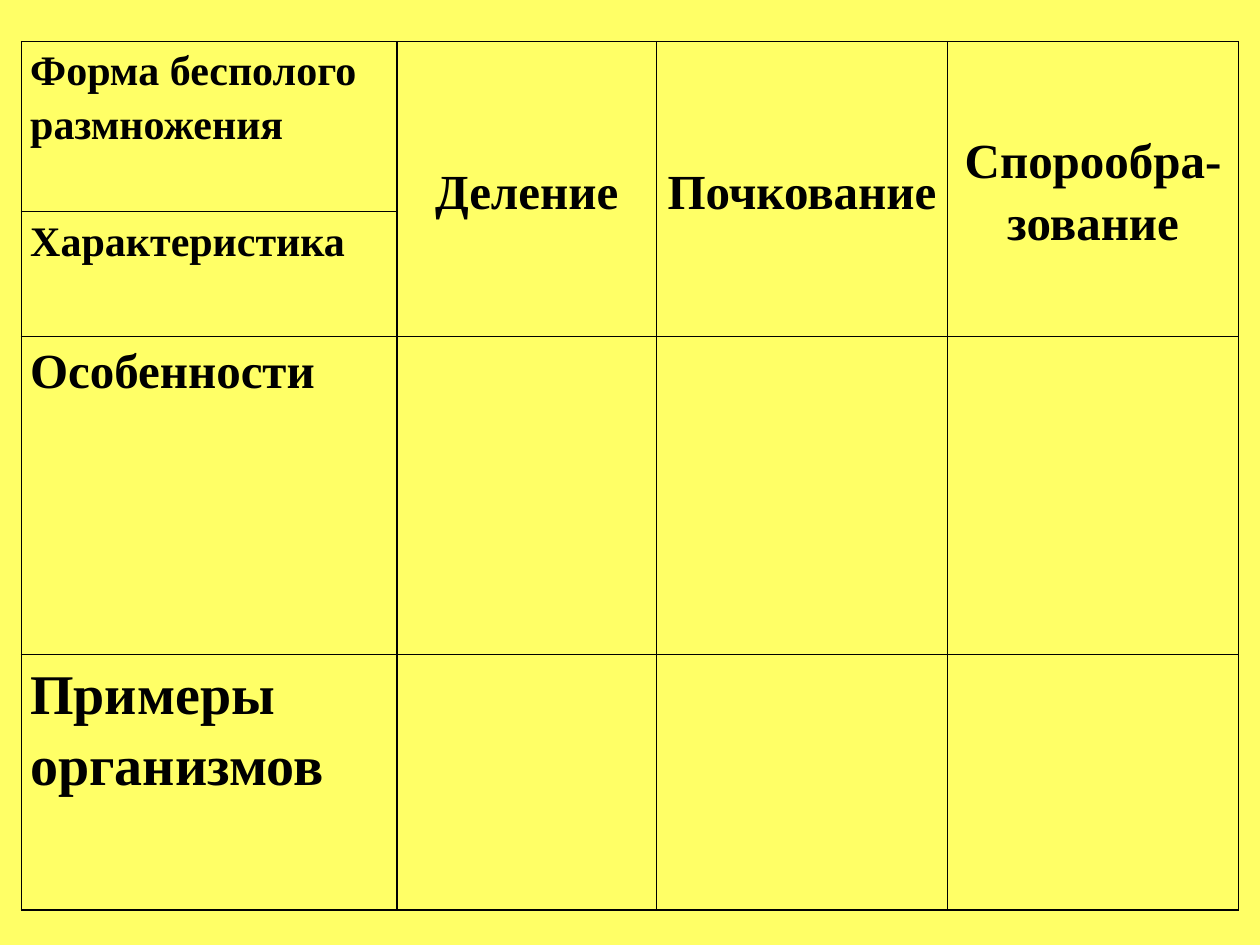
from dataclasses import dataclass

from lxml import etree
from pptx import Presentation
from pptx.dml.color import RGBColor
from pptx.enum.text import MSO_ANCHOR, PP_ALIGN
from pptx.oxml.ns import qn
from pptx.util import Inches, Pt

LEFT, CENTER, JUSTIFY = PP_ALIGN.LEFT, PP_ALIGN.CENTER, PP_ALIGN.JUSTIFY
TOP, MIDDLE = MSO_ANCHOR.TOP, MSO_ANCHOR.MIDDLE
BLANK_LAYOUT = 6


@dataclass(frozen=True)
class Theme:
    background: str = "FFFF66"
    ink: str = "000000"
    font: str = "Times New Roman"
    small: int = 24
    medium: int = 28
    large: int = 32
    line_spacing: float = 1.15
    border: float = 1
    cell_inset: float = 0.07


class SlideBuilder:
    def __init__(self, presentation, theme):
        self.theme = theme
        self.width = presentation.slide_width
        self.height = presentation.slide_height
        self.slide = presentation.slides.add_slide(presentation.slide_layouts[BLANK_LAYOUT])
        fill = self.slide.background.fill
        fill.solid()
        fill.fore_color.rgb = RGBColor.from_string(theme.background)

    def table(self, left, top, columns, rows):
        """Add a ruled, unfilled table; all lengths are shares of the slide's size."""
        frame = self.slide.shapes.add_table(
            len(rows), len(columns),
            round(left * self.width), round(top * self.height),
            round(sum(columns) * self.width), round(sum(rows) * self.height))
        table = frame.table
        table.first_row = table.horz_banding = False
        for column, share in zip(table.columns, columns):
            column.width = round(share * self.width)
        for row, share in zip(table.rows, rows):
            row.height = round(share * self.height)
        for cell in table.iter_cells():
            self.rule(cell)
            cell.fill.background()
        return table

    def rule(self, cell):
        """Draw all four borders of a cell."""
        properties = cell._tc.get_or_add_tcPr()
        for side in ("a:lnL", "a:lnR", "a:lnT", "a:lnB"):
            line = etree.SubElement(properties, qn(side), w=str(Pt(self.theme.border)))
            fill = etree.SubElement(line, qn("a:solidFill"))
            etree.SubElement(fill, qn("a:srgbClr"), val=self.theme.ink)

    def label(self, cell, text, size, alignment, anchor=TOP):
        cell.vertical_anchor = anchor
        cell.margin_left = cell.margin_right = Inches(self.theme.cell_inset)
        cell.margin_top = cell.margin_bottom = 0
        paragraph = cell.text_frame.paragraphs[0]
        paragraph.alignment = alignment
        paragraph.line_spacing = self.theme.line_spacing
        run = paragraph.add_run()
        run.text = text
        run.font.name = self.theme.font
        run.font.size = Pt(size)
        run.font.bold = True
        run.font.color.rgb = RGBColor.from_string(self.theme.ink)


def main():
    presentation = Presentation()
    presentation.slide_width = Inches(10)
    presentation.slide_height = Inches(7.5)
    theme = Theme()
    builder = SlideBuilder(presentation, theme)

    table = builder.table(
        left=0.017, top=0.044,
        columns=[0.298, 0.206, 0.231, 0.231],
        rows=[0.18, 0.09, 0.337, 0.27])

    row_headings = [
        ("Форма бесполого размножения", theme.small, LEFT),
        ("Характеристика", theme.small, JUSTIFY),
        ("Особенности", theme.medium, JUSTIFY),
        ("Примеры организмов", theme.large, JUSTIFY),
    ]
    for row, (text, size, alignment) in enumerate(row_headings):
        builder.label(table.cell(row, 0), text, size, alignment)

    reproduction_forms = ["Деление", "Почкование", "Спорообра-зование"]
    for column, text in enumerate(reproduction_forms, start=1):
        heading = table.cell(0, column)
        heading.merge(table.cell(1, column))
        builder.label(heading, text, theme.medium, CENTER, MIDDLE)

    presentation.save("out.pptx")


if __name__ == "__main__":
    main()
